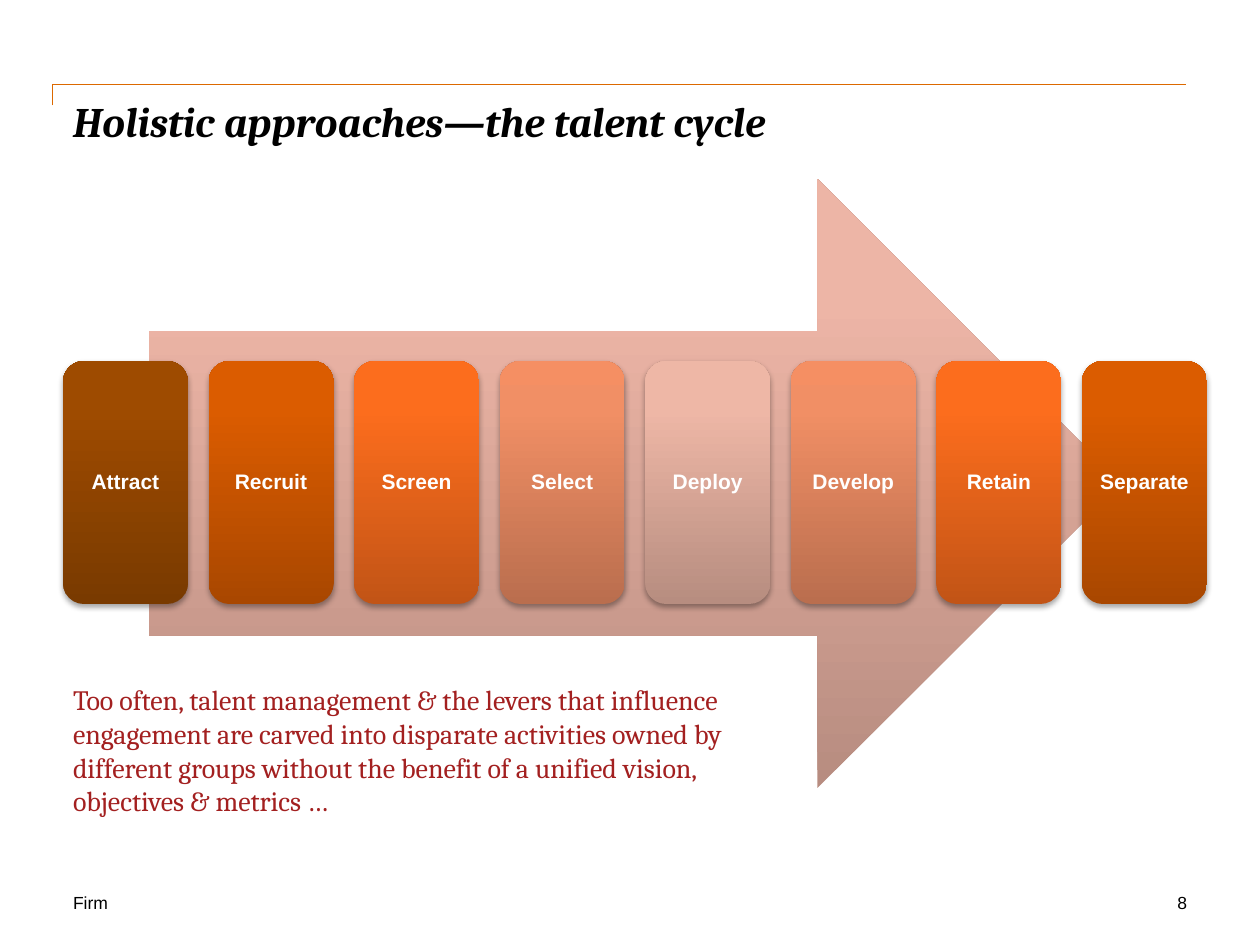
"""Build the talent cycle slide: eight stages on a broad arrow."""
from copy import deepcopy

from lxml.etree import SubElement
from pptx import Presentation
from pptx.dml.color import RGBColor
from pptx.enum.shapes import MSO_CONNECTOR as CONN, MSO_SHAPE as SHAPE
from pptx.enum.text import MSO_ANCHOR as ANCHOR, MSO_AUTO_SIZE as FIT, PP_ALIGN as ALIGN
from pptx.oxml.ns import qn
from pptx.util import Emu, Pt

PX_PER_INCH = 126
BROWN = ("793A00", "9E4B00", "9E4C00")
RUST = ("A94700", "DB5C00", "DC5C00")
ORANGE = ("C25416", "FC6D1D", "FF6D1B")
SALMON = ("BA6E4E", "F18F65", "F58F63")
PINK = ("B78D80", "EEB7A6", "F0B8A6")
ARROW = ("B78C80", "EDB5A6", "F0B5A6")
STAGES = [
    ("Attract", BROWN), ("Recruit", RUST), ("Screen", ORANGE), ("Select", SALMON),
    ("Deploy", PINK), ("Develop", SALMON), ("Retain", ORANGE), ("Separate", RUST),
]
MESSAGE = (
    "Too often, talent management & the levers that influence engagement are "
    "carved into disparate activities owned by different groups without the "
    "benefit of a unified vision, objectives & metrics …"
)


def px(n):
    """Turn pixels into EMU."""
    return Emu(round(n * 914400 / PX_PER_INCH))


def rgb(code):
    """Turn a hex string into a colour."""
    return RGBColor.from_string(code)


def write(s, text, font="Arial", size=10, color="000000", bold=False, italic=False,
          align=ALIGN.LEFT, anchor=ANCHOR.TOP, inset=0, spacing=1.0):
    """Put one formatted paragraph into a shape."""
    tf = s.text_frame
    tf.word_wrap, tf.auto_size, tf.vertical_anchor = True, FIT.NONE, anchor
    tf.margin_left = tf.margin_right = tf.margin_top = tf.margin_bottom = px(inset)
    p = tf.paragraphs[0]
    p.alignment, p.line_spacing = align, spacing
    r = p.add_run()
    r.text = text
    r.font.name, r.font.size, r.font.color.rgb = font, Pt(size), rgb(color)
    r.font.bold, r.font.italic = bold, italic


def add_text(slide, box, text, **fmt):
    """Add a text box."""
    write(slide.shapes.add_textbox(*map(px, box)), text, **fmt)


def add_title(slide, box, text, **fmt):
    """Place and fill the title placeholder."""
    s = slide.shapes.title
    s.left, s.top, s.width, s.height = map(px, box)
    write(s, text, **fmt)


def add_gradient_shape(slide, kind, box, colors):
    """Add a borderless shape shaded from bottom to top."""
    s = slide.shapes.add_shape(kind, *map(px, box))
    s.shadow.inherit = False
    s.line.fill.background()
    s.fill.gradient()
    s.fill.gradient_angle = 90
    stops = s._element.spPr.find(qn("a:gradFill")).find(qn("a:gsLst"))
    stops.append(deepcopy(stops[0]))
    for stop, position, color in zip(s.fill.gradient_stops, (0, 0.8, 1), colors):
        stop.position, stop.color.rgb = position, rgb(color)
    return s


def add_shadow(s):
    """Give a shape a soft shadow below it."""
    effects = s._element.spPr.find(qn("a:effectLst"))
    shadow = SubElement(effects, qn("a:outerShdw"), blurRad="40000", dist="23000",
                        dir="5400000", rotWithShape="0")
    color = SubElement(shadow, qn("a:srgbClr"), val="000000")
    SubElement(color, qn("a:alpha"), val="35000")


def add_stage(slide, box, text, colors):
    """Add one stage card with its label."""
    s = add_gradient_shape(slide, SHAPE.ROUNDED_RECTANGLE, box, colors)
    add_shadow(s)
    write(s, text, size=12, color="FFFFFF", bold=True, align=ALIGN.CENTER,
          anchor=ANCHOR.MIDDLE, inset=6, spacing=0.9)


def add_header_rule(slide):
    """Add the rule above the title, bent down at its left end."""
    c = slide.shapes.add_connector(CONN.ELBOW, *map(px, (630, 662, 609, -472)))
    c.line.color.rgb, c.line.width = rgb("DC6900"), Pt(1)
    spPr = c._element.spPr
    spPr.find(qn("a:xfrm")).set("rot", "5400000")
    spPr.find(qn("a:prstGeom")).set("prst", "bentConnector2")
    SubElement(spPr, qn("a:effectLst"))


def main():
    """Build and save the slide."""
    prs = Presentation()
    prs.slide_width, prs.slide_height = px(1260), px(945)
    slide = prs.slides.add_slide(prs.slide_layouts[5])
    add_text(slide, (73, 892, 357, 21), "Firm")
    add_header_rule(slide)
    add_title(slide, (73, 95, 1113, 126), "Holistic approaches—the talent cycle",
              font="Cambria", size=24, bold=True, italic=True)
    add_gradient_shape(slide, SHAPE.RIGHT_ARROW, (149, 179, 973, 609), ARROW)
    left, span = 63, 1019
    for i, (name, colors) in enumerate(STAGES):
        x = left + span * i / (len(STAGES) - 1)
        add_stage(slide, (x, 361, 125, 243), name, colors)
    add_text(slide, (977, 892, 210, 21), "8", align=ALIGN.RIGHT)
    add_text(slide, (73, 683, 725, 126), MESSAGE, font="Cambria", size=16, color="A32020")
    prs.save("out.pptx")


if __name__ == "__main__":
    main()
